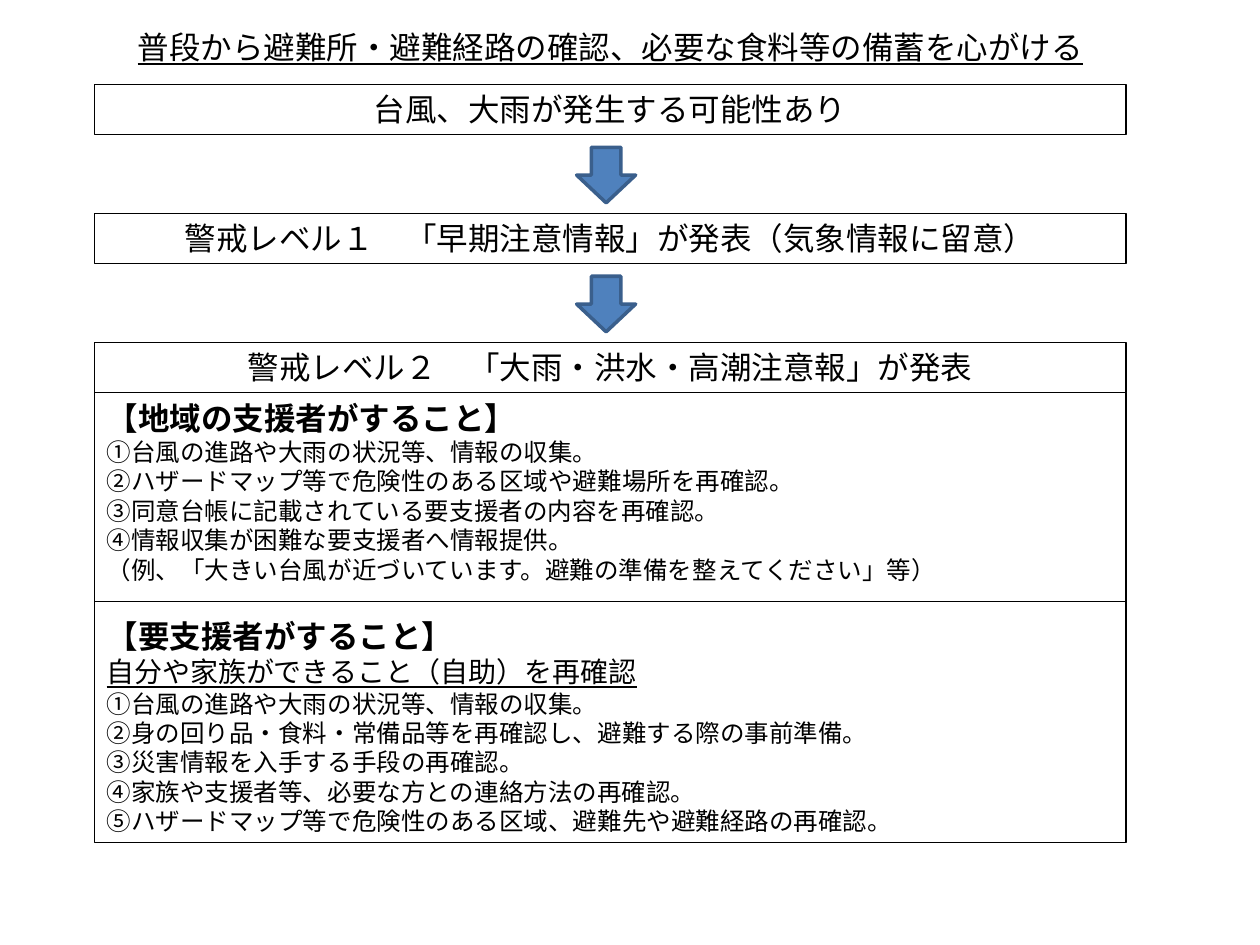
from dataclasses import dataclass

from lxml.etree import SubElement
from pptx import Presentation
from pptx.dml.color import RGBColor
from pptx.enum.shapes import MSO_CONNECTOR, MSO_SHAPE
from pptx.enum.text import MSO_ANCHOR, MSO_AUTO_SIZE, PP_ALIGN
from pptx.oxml.ns import qn
from pptx.util import Cm, Pt

BLACK, BLUE, DARK_BLUE = "000000", "4F81BD", "3A5F8C"
LEFT, WIDTH, ROW = 1.9, 20.8, 1.02
FIRST_TOP, STEP, ARROW_OFFSET = 1.7, 2.6, 1.27
ARROW_WIDTH, ARROW_HEIGHT = 1.19, 1.12
DIVIDER_TOP = 12.12

HEADING = {"size": Pt(18), "name": "Calibri", "bold": True}
SUBHEADING = {"size": Pt(16), "name": "Calibri", "underline": True}
ITEM = {"size": Pt(14), "name": "Noto Sans CJK JP"}
STAGE = {"size": Pt(18), "name": "Calibri"}
TITLE = {**STAGE, "underline": True}


@dataclass
class Line:
    text: str
    style: dict
    align: PP_ALIGN = PP_ALIGN.LEFT
    before: float = 0


def color(value: str) -> RGBColor:
    return RGBColor.from_string(value)


def write(shape, lines: list[Line]) -> None:
    """Fill a shape with one paragraph per line."""
    frame = shape.text_frame
    settings = {"word_wrap": True, "auto_size": MSO_AUTO_SIZE.NONE,
                "vertical_anchor": MSO_ANCHOR.TOP}
    for key, value in settings.items():
        setattr(frame, key, value)
    for index, line in enumerate(lines):
        para = frame.add_paragraph() if index else frame.paragraphs[0]
        para.alignment = line.align
        para.space_before = Pt(line.before)
        span = para.add_run()
        span.text = line.text
        span.font.color.rgb = color(BLACK)
        for key, value in line.style.items():
            setattr(span.font, key, value)


def outline(shape, value: str, width: float) -> None:
    shape.line.color.rgb = color(value)
    shape.line.width = Pt(width)


def add_box(page, top: float, height: float, lines: list[Line]) -> None:
    box = page.shapes.add_shape(MSO_SHAPE.RECTANGLE, Cm(LEFT), Cm(top),
                                Cm(WIDTH), Cm(height))
    box.shadow.inherit = False
    box.fill.background()
    outline(box, BLACK, 0.75)
    write(box, lines)


def add_arrow(page, top: float) -> None:
    center = LEFT + WIDTH / 2 - 0.08
    arrow = page.shapes.add_shape(
        MSO_SHAPE.DOWN_ARROW, Cm(center - ARROW_WIDTH / 2), Cm(top),
        Cm(ARROW_WIDTH), Cm(ARROW_HEIGHT))
    arrow.shadow.inherit = False
    arrow.fill.solid()
    arrow.fill.fore_color.rgb = color(BLUE)
    outline(arrow, DARK_BLUE, 2)


def add_divider(page, top: float) -> None:
    divider = page.shapes.add_connector(
        MSO_CONNECTOR.STRAIGHT, Cm(LEFT), Cm(top), Cm(LEFT + WIDTH), Cm(top))
    outline(divider, BLACK, 0.75)
    SubElement(divider._element.spPr, qn("a:effectLst"))


STAGES = [
    "台風、大雨が発生する可能性あり",
    "警戒レベル１　「早期注意情報」が発表（気象情報に留意）",
    "警戒レベル２　「大雨・洪水・高潮注意報」が発表",
]
SUPPORTER_ITEMS = [
    "①台風の進路や大雨の状況等、情報の収集。",
    "②ハザードマップ等で危険性のある区域や避難場所を再確認。",
    "③同意台帳に記載されている要支援者の内容を再確認。",
    "④情報収集が困難な要支援者へ情報提供。",
    "（例、「大きい台風が近づいています。避難の準備を整えてください」等）",
]
RESIDENT_ITEMS = [
    "①台風の進路や大雨の状況等、情報の収集。",
    "②身の回り品・食料・常備品等を再確認し、避難する際の事前準備。",
    "③災害情報を入手する手段の再確認。",
    "④家族や支援者等、必要な方との連絡方法の再確認。",
    "⑤ハザードマップ等で危険性のある区域、避難先や避難経路の再確認。",
]


def main() -> None:
    deck = Presentation()
    deck.slide_width, deck.slide_height = Cm(25.4), Cm(19.05)
    page = deck.slides.add_slide(deck.slide_layouts[5])

    # Title
    title = page.shapes.title
    place = {"left": LEFT, "top": 0.43, "width": WIDTH, "height": ROW}
    for key, value in place.items():
        setattr(title, key, Cm(value))
    write(title, [Line("普段から避難所・避難経路の確認、必要な食料等の備蓄を心がける",
                       TITLE, PP_ALIGN.CENTER)])

    # Alert stages with an arrow between each pair
    for index, text in enumerate(STAGES):
        top = FIRST_TOP + index * STEP
        add_box(page, top, ROW, [Line(text, STAGE, PP_ALIGN.CENTER)])
        if index < len(STAGES) - 1:
            add_arrow(page, top + ARROW_OFFSET)

    # Actions for supporters and residents
    actions = [
        Line("【地域の支援者がすること】", HEADING),
        *(Line(text, ITEM) for text in SUPPORTER_ITEMS),
        Line("【要支援者がすること】", HEADING, before=19),
        Line("自分や家族ができること（自助）を再確認", SUBHEADING),
        *(Line(text, ITEM) for text in RESIDENT_ITEMS),
    ]
    add_box(page, top + ROW, 9.07, actions)
    add_divider(page, DIVIDER_TOP)

    deck.save("out.pptx")


if __name__ == "__main__":
    main()
